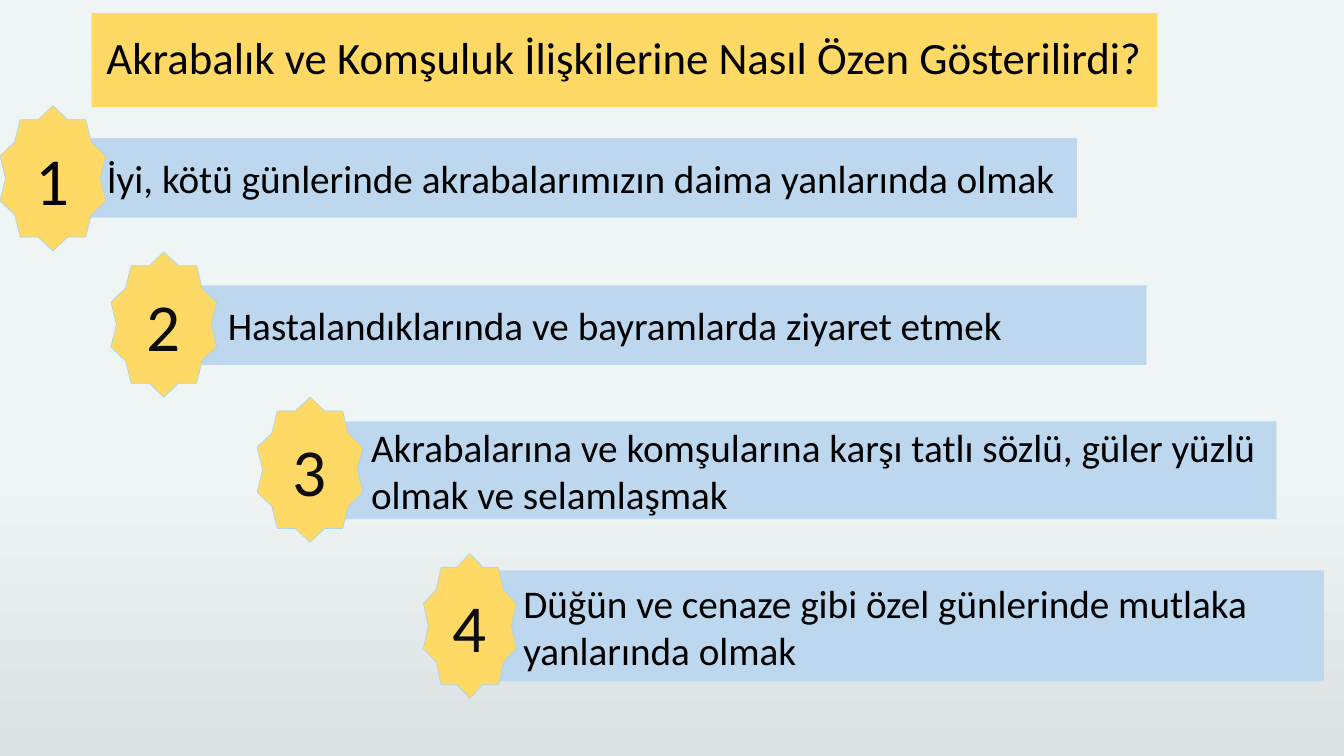
from pptx import Presentation
from pptx.util import Inches, Pt
from pptx.dml.color import RGBColor
from pptx.enum.shapes import MSO_SHAPE
from pptx.enum.text import MSO_ANCHOR, PP_ALIGN

RECT = MSO_SHAPE.RECTANGLE
STAR = MSO_SHAPE.STAR_10_POINT
MIDDLE = MSO_ANCHOR.MIDDLE
LEFT, CENTER = PP_ALIGN.LEFT, PP_ALIGN.CENTER
GOLD, BLUE, BLACK, DARK = "FFD966", "BDD7EE", "000000", "0D0D0D"


def color(code):
    return RGBColor.from_string(code)


def add_box(kind, box, fill, lines, size, ink=BLACK, align=CENTER, inset=0.1):
    shape = slide.shapes.add_shape(kind, *[Inches(n) for n in box])
    shape.shadow.inherit = False
    shape.fill.solid()
    shape.fill.fore_color.rgb = color(fill)
    shape.line.fill.background()
    frame = shape.text_frame
    frame.word_wrap = True
    frame.vertical_anchor = MIDDLE
    frame.margin_left = Inches(inset)
    frame.margin_right = Inches(0.05)
    if align == CENTER:
        frame.margin_right = Inches(inset)
    for i, line in enumerate(lines):
        para = frame.add_paragraph() if i else frame.paragraphs[0]
        para.alignment = align
        run = para.add_run()
        run.text = line
        run.font.name = "Calibri"
        run.font.size = Pt(size)
        run.font.color.rgb = color(ink)
    return shape


prs = Presentation()
prs.slide_width = Inches(13.33)
prs.slide_height = Inches(7.5)
slide = prs.slides.add_slide(prs.slide_layouts[6])

back = slide.background.fill
back.gradient()
back.gradient_angle = 270
for stop, (place, code) in zip(back.gradient_stops, [(0.62, "EFF4F5"), (1, "DCE1E4")]):
    stop.position = place
    stop.color.rgb = color(code)

steps = [
    ((0.59, 1.37, 10.09, 0.79), 0.47, (0, 1.05, 1.05), BLACK,
     ["İyi, kötü günlerinde akrabalarımızın daima yanlarında olmak"]),
    ((1.84, 2.83, 9.53, 0.79), 0.42, (1.1, 2.5, 1.05), DARK,
     ["Hastalandıklarında ve bayramlarda ziyaret etmek"]),
    ((3.08, 4.18, 9.58, 0.97), 0.6, (2.55, 3.94, 1.05), DARK,
     ["Akrabalarına ve komşularına karşı tatlı sözlü, güler yüzlü olmak ve selamlaşmak"]),
    ((4.47, 5.66, 8.66, 1.1), 0.72, (4.2, 5.49, 0.92), DARK,
     ["Düğün ve cenaze gibi özel günlerinde mutlaka", "yanlarında olmak"]),
]
for num, (bar, inset, spot, ink, lines) in enumerate(steps, 1):
    add_box(RECT, bar, BLUE, lines, 28, align=LEFT, inset=inset)
    star = add_box(STAR, (*spot, 1.44), GOLD, [str(num)], 48, ink)
    star.line.color.rgb = color("ACD5DF")
    star.line.width = Pt(0.5)

title = add_box(RECT, (0.91, 0.13, 10.57, 0.93), GOLD,
                ["Akrabalık ve Komşuluk İlişkilerine Nasıl Özen Gösterilirdi?"], 32)
title.text_frame.paragraphs[0].line_spacing = 0.9

prs.save("out.pptx")
